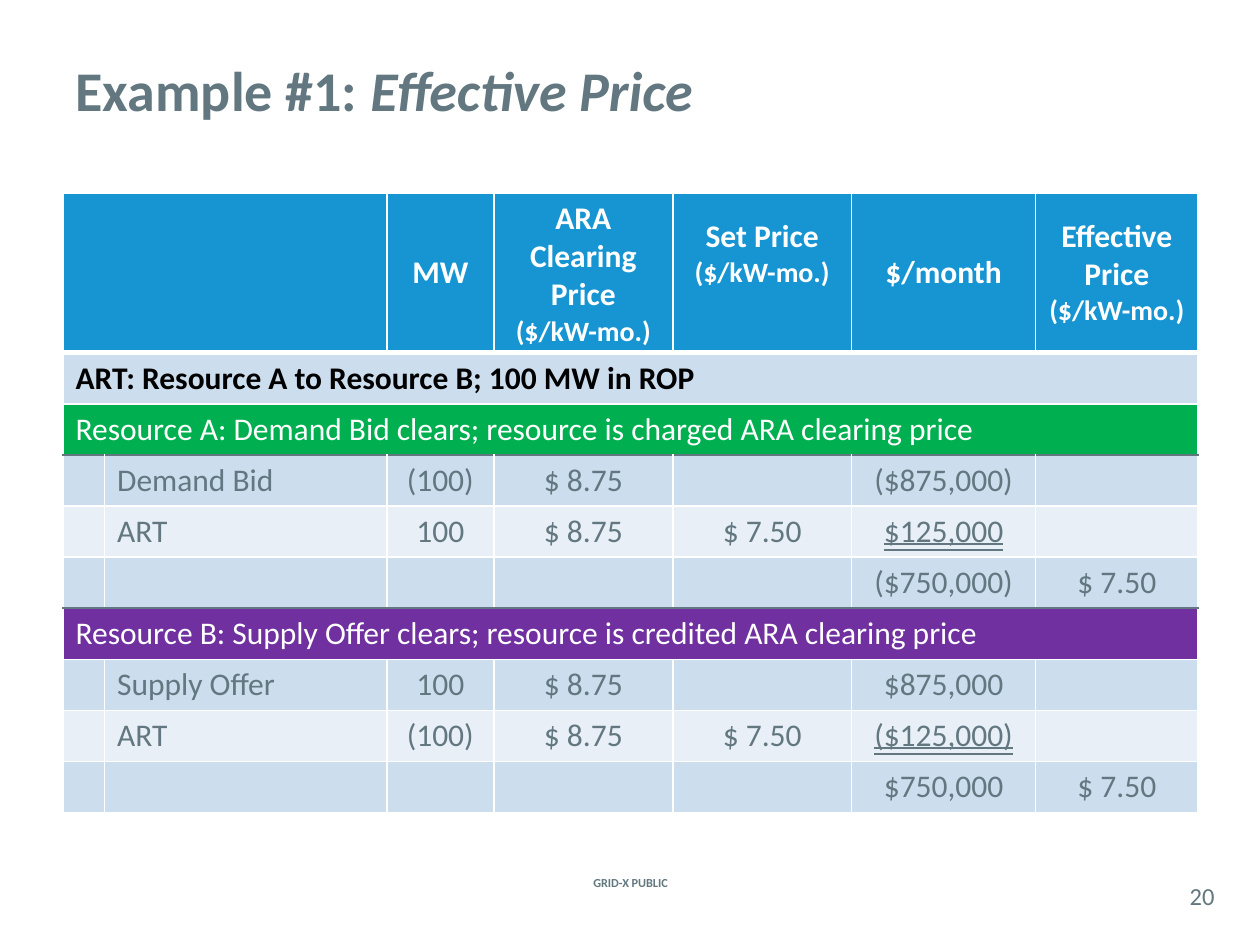
from lxml.etree import SubElement
from pptx import Presentation
from pptx.dml.color import RGBColor
from pptx.enum.text import MSO_ANCHOR, MSO_UNDERLINE, PP_ALIGN
from pptx.oxml.ns import qn
from pptx.util import Inches, Pt

COLORS = {
    "white": "FFFFFF", "black": "000000", "slate": "62777F", "header": "1795D2",
    "band": "CCDDEE", "light": "E8EFF7", "green": "00B050", "purple": "7030A0",
}
COL_WIDTHS = [0.33, 2.24, 0.85, 1.42, 1.42, 1.46, 1.29]
TABLE_H, HEADER_H = 4.92, 1.27

UNIT = ("($/kW-mo.)", 16)
HEADERS = {
    2: [("MW", 18)],
    3: [("ARA Clearing Price", 18), UNIT],
    4: [("Set Price", 18), UNIT],
    5: [("$/month", 18)],
    6: [("Effective Price", 18), UNIT],
}
# Section rows: text, fill, text colour, bold
SECTIONS = {
    1: ("ART: Resource A to Resource B; 100 MW in ROP", "band", "black", True),
    2: ("Resource A: Demand Bid clears; resource is charged ARA clearing price",
        "green", "white", False),
    6: ("Resource B: Supply Offer clears; resource is credited ARA clearing price",
        "purple", "white", False),
}
# Detail rows: values from the second column on
DETAILS = {
    3: ["Demand Bid", "(100)", "$ 8.75", "", "($875,000)", ""],
    4: ["ART", "100", "$ 8.75", "$ 7.50", "$125,000", ""],
    5: ["", "", "", "", "($750,000)", "$ 7.50"],
    7: ["Supply Offer", "100", "$ 8.75", "", "$875,000", ""],
    8: ["ART", "(100)", "$ 8.75", "$ 7.50", "($125,000)", ""],
    9: ["", "", "", "", "$750,000", "$ 7.50"],
}
ART_ROWS = (4, 8)
AMOUNT_COL = 5
N_ROWS = 1 + len(SECTIONS) + len(DETAILS)
# Rules between rows, by the row above; all others are thin and white
RULES = {0: ("white", 3), 2: ("slate", 1), 5: ("slate", 1)}


def rgb(name):
    return RGBColor.from_string(COLORS[name])


class Deck:
    font = "Calibri"

    def __init__(self, prs):
        self.s = prs.slides.add_slide(prs.slide_layouts[5])

    def style(self, p, size, color="slate", bold=False, align=PP_ALIGN.LEFT):
        p.alignment = align
        f = p.font
        f.name, f.size, f.bold = self.font, Pt(size), bold
        f.color.rgb = rgb(color)

    def title(self, plain, italic):
        sp = self.s.shapes.title
        sp.left, sp.top, sp.width, sp.height = map(Inches, (0.5, 0.08, 9, 1.25))
        sp.text_frame.vertical_anchor = MSO_ANCHOR.MIDDLE
        p = sp.text_frame.paragraphs[0]
        p.add_run().text = plain
        r = p.add_run()
        r.text, r.font.italic = italic, True
        self.style(p, 32, bold=True)

    def label(self, text, box, size, bold=False):
        tf = self.s.shapes.add_textbox(*map(Inches, box)).text_frame
        tf.margin_left = tf.margin_right = tf.margin_top = tf.margin_bottom = 0
        tf.word_wrap = True
        tf.vertical_anchor = MSO_ANCHOR.MIDDLE
        p = tf.paragraphs[0]
        p.text = text
        self.style(p, size, bold=bold, align=PP_ALIGN.CENTER)

    def cell_look(self, cell, fill, top, bottom):
        tcPr = cell._tc.get_or_add_tcPr()
        side = ("white", 1)
        for tag, (color, width) in zip(("lnL", "lnR", "lnT", "lnB"),
                                       (side, side, top, bottom)):
            ln = SubElement(tcPr, qn(f"a:{tag}"), w=str(Pt(width)))
            solid = SubElement(ln, qn("a:solidFill"))
            SubElement(solid, qn("a:srgbClr"), val=COLORS[color])
        cell.fill.solid()
        cell.fill.fore_color.rgb = rgb(fill)

    def cell_text(self, cell, lines, **style):
        """Fill a cell with one paragraph for each (text, size) pair."""
        tf = cell.text_frame
        for i, (text, size) in enumerate(lines):
            p = tf.add_paragraph() if i else tf.paragraphs[0]
            p.text = text
            self.style(p, size, **style)

    def price_table(self):
        tbl = self.s.shapes.add_table(
            N_ROWS, len(COL_WIDTHS), Inches(0.5), Inches(1.53),
            Inches(9), Inches(TABLE_H)).table
        tbl.first_row = tbl.horz_banding = False
        for col, width in zip(tbl.columns, COL_WIDTHS):
            col.width = Inches(width)
        for i, row in enumerate(tbl.rows):
            row.height = Inches((TABLE_H - HEADER_H) / (N_ROWS - 1) if i else HEADER_H)
            if i == 0:
                fill = "header"
            elif i in SECTIONS:
                fill = SECTIONS[i][1]
            else:
                fill = "light" if i in ART_ROWS else "band"
            for cell in row.cells:
                self.cell_look(cell, fill, RULES.get(i - 1, ("white", 1)),
                               RULES.get(i, ("white", 1)))

        tbl.cell(0, 0).merge(tbl.cell(0, 1))
        for j, lines in HEADERS.items():
            cell = tbl.cell(0, j)
            cell.vertical_anchor = MSO_ANCHOR.MIDDLE
            self.cell_text(cell, lines, color="white", bold=True, align=PP_ALIGN.CENTER)
        tbl.cell(0, 4).margin_bottom = Inches(0.35)  # lines up with Effective Price

        for i, (text, _, color, bold) in SECTIONS.items():
            tbl.cell(i, 0).merge(tbl.cell(i, len(COL_WIDTHS) - 1))
            self.cell_text(tbl.cell(i, 0), [(text, 18)], color=color, bold=bold)

        for i, values in DETAILS.items():
            for j, text in enumerate(values, start=1):
                if text:
                    align = PP_ALIGN.LEFT if j == 1 else PP_ALIGN.CENTER
                    self.cell_text(tbl.cell(i, j), [(text, 18)], align=align)
        for i in ART_ROWS:
            p = tbl.cell(i, AMOUNT_COL).text_frame.paragraphs[0]
            p.runs[0].font.underline = MSO_UNDERLINE.DOUBLE_LINE


def main():
    prs = Presentation()
    prs.slide_width, prs.slide_height = Inches(10), Inches(7.5)
    deck = Deck(prs)
    deck.label("GRID-X PUBLIC", (4.27, 6.92, 1.47, 0.17), 7, bold=True)
    deck.label("20", (9.33, 6.96, 0.42, 0.29), 14)
    deck.title("Example #1: ", "Effective Price")
    deck.price_table()
    prs.save("out.pptx")


if __name__ == "__main__":
    main()
